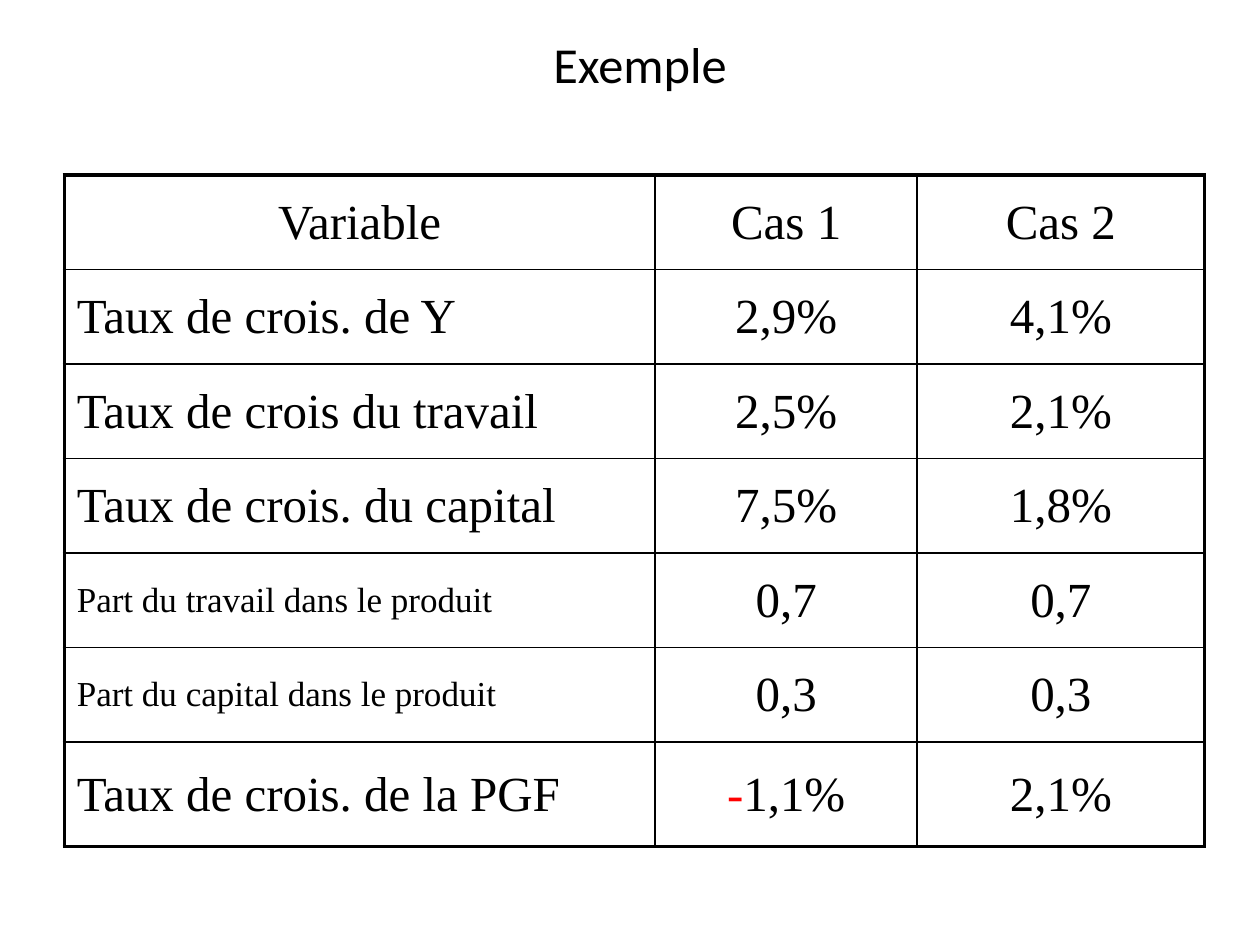
import pptx
import pptx.util
import pptx.dml.color
import pptx.enum.text
import pptx.oxml
import pptx.oxml.ns
from dataclasses import dataclass

Inches = pptx.util.Inches
Pt = pptx.util.Pt
ALIGN = pptx.enum.text.PP_ALIGN
MIDDLE = pptx.enum.text.MSO_ANCHOR.MIDDLE


@dataclass(frozen=True)
class Theme:
    ink: str = "000000"
    negative: str = "FF0000"
    title_font: str = "Calibri"
    table_font: str = "Times New Roman"
    title_size: float = 28.8
    body_size: float = 28
    small_size: float = 20
    inner_line: float = 1
    outer_line: float = 2.25


THEME = Theme()

COLUMN_WIDTHS = (4.69, 2.08, 2.28)
ROW_HEIGHTS = (0.75,) * 6 + (0.83,)
ROWS = (
    ("Variable", "Cas 1", "Cas 2"),
    ("Taux de crois. de Y", "2,9%", "4,1%"),
    ("Taux de crois du travail", "2,5%", "2,1%"),
    ("Taux de crois. du capital", "7,5%", "1,8%"),
    ("Part du travail dans le produit", "0,7", "0,7"),
    ("Part du capital dans le produit", "0,3", "0,3"),
    ("Taux de crois. de la PGF", "-1,1%", "2,1%"),
)


def add_run(p, text, font=THEME.table_font, size=THEME.body_size, color=THEME.ink):
    r = p.add_run()
    r.text = text
    r.font.name = font
    r.font.size = Pt(size)
    r.font.color.rgb = pptx.dml.color.RGBColor.from_string(color)


def set_borders(cell, widths):
    """Draw the four sides; widths are left, right, top, bottom in points."""
    tc_pr = cell._tc.get_or_add_tcPr()
    for i, (side, width) in enumerate(zip("LRTB", widths)):
        tc_pr.insert(i, pptx.oxml.parse_xml(
            f'<a:ln{side} {pptx.oxml.ns.nsdecls("a")} w="{Pt(width)}">'
            f'<a:solidFill><a:srgbClr val="{THEME.ink}"/></a:solidFill>'
            f'</a:ln{side}>'))


def add_title(s, text, left, top, width, height):
    sp = s.shapes.add_textbox(Inches(left), Inches(top), Inches(width), Inches(height))
    tf = sp.text_frame
    tf.word_wrap = True
    tf.vertical_anchor = MIDDLE
    p = tf.paragraphs[0]
    p.alignment = ALIGN.CENTER
    add_run(p, text, font=THEME.title_font, size=THEME.title_size)


def fill_cell(cell, text, is_label, centered):
    cell.vertical_anchor = MIDDLE
    p = cell.text_frame.paragraphs[0]
    p.alignment = ALIGN.CENTER if centered else ALIGN.LEFT
    size = THEME.small_size if is_label and text.startswith("Part") else THEME.body_size
    # The minus sign of a negative value stands out
    if text.startswith("-"):
        add_run(p, "-", color=THEME.negative)
        text = text[1:]
    add_run(p, text, size=size)


def add_growth_table(s, left, top, width, height):
    n_rows, n_cols = len(ROWS), len(COLUMN_WIDTHS)
    table = s.shapes.add_table(n_rows, n_cols, Inches(left), Inches(top),
                               Inches(width), Inches(height)).table
    table.first_row = False
    table.horz_banding = False
    for column, w in zip(table.columns, COLUMN_WIDTHS):
        column.width = Inches(w)
    for row, h in zip(table.rows, ROW_HEIGHTS):
        row.height = Inches(h)

    for i, values in enumerate(ROWS):
        for j, text in enumerate(values):
            cell = table.cell(i, j)
            cell.fill.background()
            fill_cell(cell, text, is_label=j == 0, centered=i == 0 or j > 0)
            # Heavy outer frame, thin inner grid
            on_frame = (j == 0, j == n_cols - 1, i == 0, i == n_rows - 1)
            set_borders(cell, [THEME.outer_line if edge else THEME.inner_line
                               for edge in on_frame])


def main():
    prs = pptx.Presentation()
    prs.slide_width, prs.slide_height = Inches(10), Inches(7.5)
    s = prs.slides.add_slide(prs.slide_layouts[6])
    add_title(s, "Exemple", 0.83, 0.25, 8.5, 0.51)
    add_growth_table(s, 0.51, 1.39, sum(COLUMN_WIDTHS), sum(ROW_HEIGHTS))
    prs.save("out.pptx")


if __name__ == "__main__":
    main()
